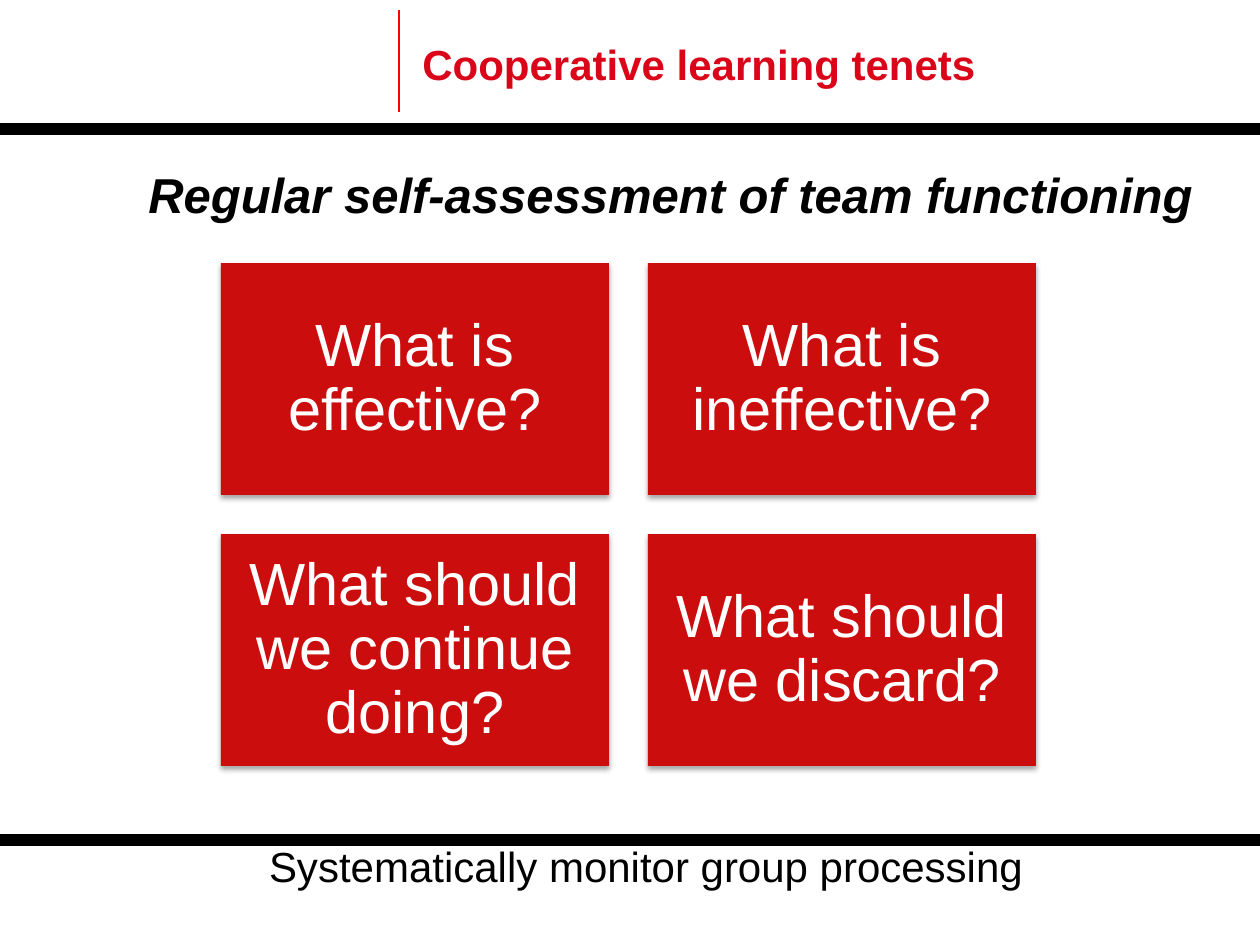
from dataclasses import dataclass
from itertools import product

from lxml.etree import SubElement
from pptx import Presentation
from pptx.dml.color import RGBColor
from pptx.enum.shapes import MSO_CONNECTOR as CONN, MSO_SHAPE as SHAPE
from pptx.enum.text import MSO_ANCHOR as ANCHOR, MSO_AUTO_SIZE as AUTO, PP_ALIGN as ALIGN
from pptx.oxml.ns import qn
from pptx.util import Pt


@dataclass(frozen=True)
class Theme:
    font: str = "Arial"
    black: str = "000000"
    white: str = "FFFFFF"
    rule: str = "FF0000"
    title: str = "DA0519"
    card: str = "CB0D0E"
    title_size: int = 24
    heading_size: int = 28
    card_size: int = 34
    footer_size: int = 24


THEME = Theme()
QUESTIONS = [
    "What is effective?",
    "What is ineffective?",
    "What should we continue doing?",
    "What should we discard?",
]


def px(n):
    return round(n * 914400 / 126)


def set_attrs(obj, values):
    for name, value in values.items():
        setattr(obj, name, value)


def write(tf, text, size, color, align=ALIGN.LEFT, **style):
    p = tf.paragraphs[0]
    p.alignment = align
    r = p.add_run()
    r.text = text
    set_attrs(r.font, {"name": THEME.font, "size": Pt(size), **style})
    r.font.color.rgb = RGBColor.from_string(color)
    return p


def add_rule(s, x1, y1, x2, y2, color, width):
    line = s.shapes.add_connector(CONN.STRAIGHT, px(x1), px(y1), px(x2), px(y2))
    line.line.color.rgb = RGBColor.from_string(color)
    line.line.width = Pt(width)
    SubElement(line._element.spPr, qn("a:effectLst"))


def add_label(s, box, text, size, color, wrap=False, **style):
    tf = s.shapes.add_textbox(*map(px, box)).text_frame
    set_attrs(tf, {"word_wrap": wrap, "auto_size": AUTO.SHAPE_TO_FIT_TEXT})
    write(tf, text, size, color, **style)


def add_shadow(sp):
    sp.shadow.inherit = False
    effects = sp._element.spPr.find(qn("a:effectLst"))
    shadow = SubElement(effects, qn("a:outerShdw"), blurRad=str(Pt(3.1)),
                        dist=str(Pt(1.8)), dir="5400000", rotWithShape="0")
    color = SubElement(shadow, qn("a:srgbClr"), val=THEME.black)
    SubElement(color, qn("a:alpha"), val="35000")


def add_card(s, box, text):
    sp = s.shapes.add_shape(SHAPE.RECTANGLE, *map(px, box))
    sp.fill.solid()
    sp.fill.fore_color.rgb = RGBColor.from_string(THEME.card)
    sp.line.fill.background()
    add_shadow(sp)
    tf = sp.text_frame
    sides = ("left", "top", "right", "bottom")
    set_attrs(tf, {"word_wrap": True, "vertical_anchor": ANCHOR.MIDDLE,
                   **{f"margin_{side}": px(18) for side in sides}})
    p = write(tf, text, THEME.card_size, THEME.white, ALIGN.CENTER)
    p.line_spacing = 0.9


def add_cards(s):
    left, top, width, height, gap = 221, 263, 388, 232, 39
    for (row, col), text in zip(product(range(2), repeat=2), QUESTIONS):
        box = (left + col * (width + gap), top + row * (height + gap), width, height)
        add_card(s, box, text)


def main():
    prs = Presentation()
    set_attrs(prs, {"slide_width": px(1260), "slide_height": px(945)})
    s = prs.slides.add_slide(prs.slide_layouts[6])
    add_rule(s, 399, 112, 399, 10, THEME.rule, 1.25)
    for y in (129, 840):
        add_rule(s, 0, y, 1260, y, THEME.black, 7)
    add_label(s, (410, 32, 583, 63), "Cooperative learning tenets",
              THEME.title_size, THEME.title, bold=True)
    add_label(s, (136, 158, 1094, 72), "Regular self-assessment of team functioning",
              THEME.heading_size, THEME.black, bold=True, italic=True)
    add_cards(s)
    add_label(s, (32, 834, 1228, 63), "Systematically monitor group processing",
              THEME.footer_size, THEME.black, wrap=True, align=ALIGN.CENTER)
    prs.save("out.pptx")


if __name__ == "__main__":
    main()
